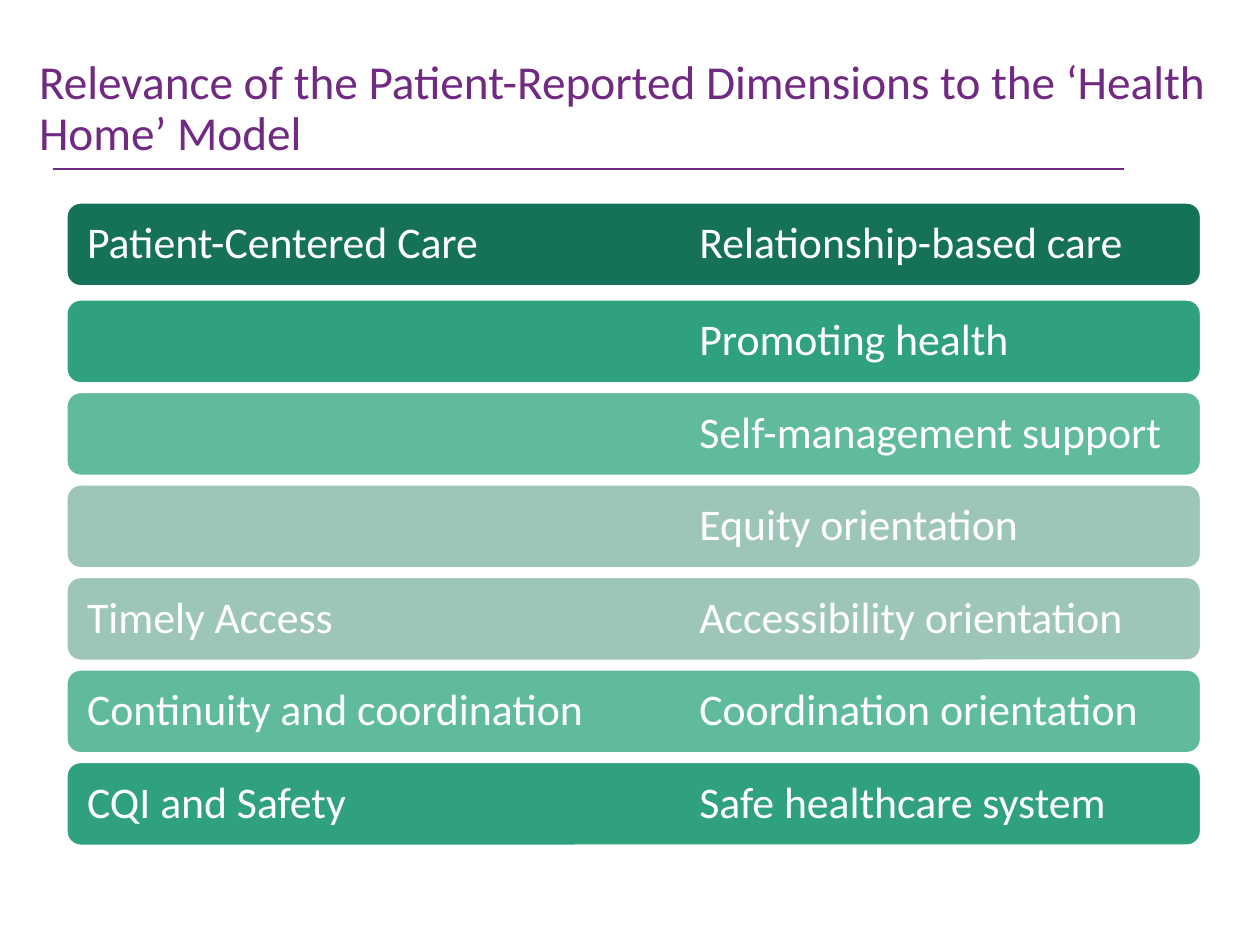
"""Build a slide matching patient-reported dimensions to the health home model."""
from dataclasses import dataclass

from lxml import etree
from pptx import Presentation
from pptx.dml.color import RGBColor
from pptx.enum.shapes import MSO_CONNECTOR, MSO_SHAPE
from pptx.enum.text import MSO_ANCHOR, MSO_AUTO_SIZE, PP_ALIGN
from pptx.oxml.ns import qn
from pptx.util import Inches, Pt

LEFT = PP_ALIGN.LEFT
MIDDLE = MSO_ANCHOR.MIDDLE
NO_AUTOFIT = MSO_AUTO_SIZE.NONE
ROUNDED = MSO_SHAPE.ROUNDED_RECTANGLE
STRAIGHT = MSO_CONNECTOR.STRAIGHT

TITLE = "Relevance of the Patient-Reported Dimensions to the ‘Health Home’ Model"
DIMENSIONS = [
    ("Patient-Centered Care", "Relationship-based care", "deep"),
    ("", "Promoting health", "strong"),
    ("", "Self-management support", "medium"),
    ("", "Equity orientation", "pale"),
    ("Timely Access", "Accessibility orientation", "pale"),
    ("Continuity and coordination", "Coordination orientation", "medium"),
    ("CQI and Safety", "Safe healthcare system", "strong"),
]


@dataclass(frozen=True)
class Theme:
    font: str = "Calibri"
    title_size: int = 27
    bar_size: int = 25
    line_width: int = 1
    line_spacing: float = 0.9
    purple: str = "702A82"
    white: str = "FFFFFF"
    deep: str = "157259"
    strong: str = "30A17E"
    medium: str = "60BB9B"
    pale: str = "9EC6B6"


THEME = Theme()
BAR_LEFT, BAR_WIDTH, BAR_HEIGHT = 0.53, 9, 0.66
BAR_INSET = 0.13
FIRST_TOP, SECOND_TOP, LAST_TOP = 1.61, 2.38, 6.05
SECOND_COLUMN = 4.86


def color(name):
    return RGBColor.from_string(getattr(THEME, name))


def write(shape, text, size, color_name):
    frame = shape.text_frame
    frame.word_wrap = True
    frame.auto_size = NO_AUTOFIT
    frame.vertical_anchor = MIDDLE
    paragraph = frame.paragraphs[0]
    paragraph.alignment = LEFT
    paragraph.line_spacing = THEME.line_spacing
    run = paragraph.add_run()
    run.text = text
    run.font.name = THEME.font
    run.font.size = Pt(size)
    run.font.color.rgb = color(color_name)
    return paragraph


def add_tab_stop(paragraph, position):
    properties = paragraph._p.get_or_add_pPr()
    tabs = etree.SubElement(properties, qn("a:tabLst"))
    etree.SubElement(tabs, qn("a:tab"), pos=str(Inches(position)), algn="l")


def add_title(slide):
    title = slide.shapes.title
    title.left, title.top = Inches(0.21), Inches(0.42)
    title.width, title.height = Inches(9.62), Inches(0.9)
    write(title, TITLE, THEME.title_size, "purple")


def add_rule(slide):
    y = Inches(1.34)
    rule = slide.shapes.add_connector(STRAIGHT, Inches(0.42), y, Inches(8.92), y)
    rule.line.color.rgb = color("purple")
    rule.line.width = Pt(THEME.line_width)
    etree.SubElement(rule._element.spPr, qn("a:effectLst"))


def add_bar(slide, top, dimension, orientation, fill):
    bar = slide.shapes.add_shape(
        ROUNDED, Inches(BAR_LEFT), Inches(top), Inches(BAR_WIDTH), Inches(BAR_HEIGHT)
    )
    bar.shadow.inherit = False
    bar.fill.solid()
    bar.fill.fore_color.rgb = color(fill)
    bar.line.color.rgb = color("white")
    bar.line.width = Pt(THEME.line_width)
    frame = bar.text_frame
    frame.margin_left = frame.margin_right = Inches(BAR_INSET)
    frame.margin_top = frame.margin_bottom = Inches(0.1)
    paragraph = write(bar, f"{dimension}\t{orientation}", THEME.bar_size, "white")
    add_tab_stop(paragraph, SECOND_COLUMN)


def main():
    presentation = Presentation()
    presentation.slide_width, presentation.slide_height = Inches(10), Inches(7.5)
    slide = presentation.slides.add_slide(presentation.slide_layouts[5])
    add_rule(slide)
    add_title(slide)
    step = (LAST_TOP - SECOND_TOP) / (len(DIMENSIONS) - 2)
    for index, (dimension, orientation, fill) in enumerate(DIMENSIONS):
        top = SECOND_TOP + (index - 1) * step if index else FIRST_TOP
        add_bar(slide, top, dimension, orientation, fill)
    presentation.save("out.pptx")


if __name__ == "__main__":
    main()
